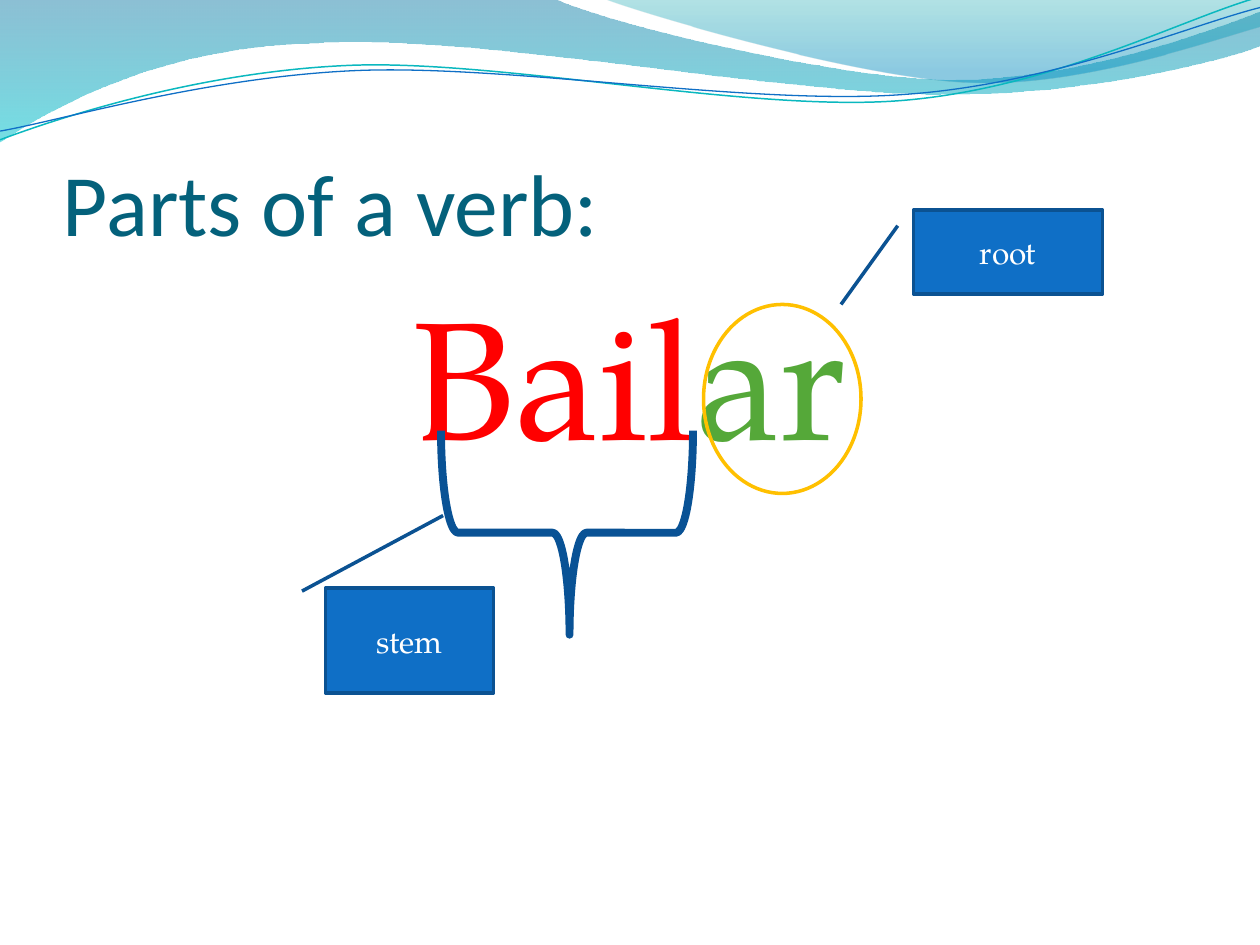
from dataclasses import dataclass

from lxml.etree import SubElement
from pptx import Presentation
from pptx.dml.color import RGBColor
from pptx.enum.shapes import MSO_SHAPE
from pptx.enum.text import MSO_ANCHOR, PP_ALIGN
from pptx.oxml.ns import qn
from pptx.util import Pt


@dataclass(frozen=True)
class Theme:
    heading_font: str = "Calibri"
    body_font: str = "TeX Gyre Pagella"
    title_size: int = 50
    verb_size: int = 96
    label_size: int = 18
    title: str = "04617B"
    stem: str = "FF0000"
    ending: str = "55A839"
    ring: str = "FFC000"
    label_fill: str = "0F6FC6"
    label_line: str = "0B5292"
    brace: str = "095295"
    label_text: str = "FFFFFF"
    teal_line: str = "0AB8BF"
    # Gradient stops: position, colour, opacity in percent
    back_wave: tuple = ((0, "0074A1", 45), (1, "00C6CF", 55))
    front_wave: tuple = ((0, "00A1A9", 30), (0.8, "008BBF", 45))


THEME = Theme()

# Wave outlines: one point is a straight segment, three are a Bezier curve
BACK_WAVE = [
    [(-0.5, -0.2)], [(316.8, -0.7)],
    [(342.7, 12.2), (478.1, 45.4), (545.8, 45.4)],
    [(614.2, 45.4), (689.8, 18.7), (720, 6.5)],
    [(720.7, 25.9)],
    [(707.8, 31.7), (626.4, 54.7), (537.1, 54)],
    [(446.4, 54), (275, 20.2), (185, 24.5)],
    [(92.9, 25.9), (33.1, 59.8), (-0.7, 81.4)],
]
FRONT_WAVE = [
    [(344.9, -0.7)],
    [(366.5, 7.9), (491, 44.6), (553.7, 46.8)],
    [(616.3, 49.7), (691.9, 23), (720, 15.1)],
    [(720, 0)],
]
TEAL_STROKE = [
    [(0, 79.9)],
    [(34.6, 67), (113.8, 41), (199.4, 37.4)],
    [(284.4, 33.8), (427, 64.1), (513.4, 57.6)],
    [(599.8, 51.1), (675.4, 10.8), (718.6, -1.4)],
]
BLUE_STROKE = [
    [(0, 74.9)],
    [(33.8, 69.1), (118.1, 43.9), (203.8, 40.3)],
    [(290.2, 36.7), (429.8, 60.5), (516.2, 54)],
    [(601.9, 48.2), (677.5, 15.1), (720, 4.3)],
]


def style_shape(shape, fill=None, line=None, width=0):
    shape.shadow.inherit = False
    if fill:
        shape.fill.solid()
        shape.fill.fore_color.rgb = RGBColor.from_string(fill)
    else:
        shape.fill.background()
    if line:
        shape.line.color.rgb = RGBColor.from_string(line)
        shape.line.width = Pt(width)
    else:
        shape.line.fill.background()


def add_outline(page, outline, close):
    """Build a freeform, then join each triple of segments into one curve."""
    points = [(Pt(x), Pt(y)) for segment in outline for x, y in segment]
    builder = page.shapes.build_freeform(*points[0], scale=1.0)
    builder.add_line_segments(points[1:], close=close)
    shape = builder.convert_to_shape()
    pieces = iter(list(shape._element.iter(qn("a:lnTo"))))
    for segment in outline[1:]:
        first, *others = [next(pieces) for _ in segment]
        if others:
            first.tag = qn("a:cubicBezTo")
        for piece in others:
            first.append(piece[0])
            piece.getparent().remove(piece)
    return shape


def add_wave(page, outline, stops):
    wave = add_outline(page, outline, close=True)
    style_shape(wave)
    wave.fill.gradient()
    wave.fill.gradient_angle = 270
    for stop, (position, colour, _) in zip(wave.fill.gradient_stops, stops):
        stop.position = position
        stop.color.rgb = RGBColor.from_string(colour)
    colours = wave._element.spPr.iter(qn("a:srgbClr"))
    for colour, (_, _, opacity) in zip(list(colours), stops):
        SubElement(colour, qn("a:alpha"), val=str(opacity * 1000))


def add_stroke(page, outline, colour, width):
    style_shape(add_outline(page, outline, close=False), line=colour, width=width)


def add_span(para, text, font, size, colour):
    span = para.add_run()
    span.text = text
    span.font.name = font
    span.font.size = Pt(size)
    span.font.color.rgb = RGBColor.from_string(colour)


def add_text(page, frame, anchor, margins):
    """Add a wrapping text box and return its first paragraph."""
    box = page.shapes.add_textbox(*map(Pt, frame)).text_frame
    box.word_wrap = True
    box.vertical_anchor = anchor
    box.margin_left, box.margin_top, box.margin_right, box.margin_bottom = map(Pt, margins)
    return box.paragraphs[0]


def add_shape(page, kind, frame, **style):
    shape = page.shapes.add_shape(kind, *map(Pt, frame))
    style_shape(shape, **style)
    return shape


def add_callout(page, text, frame, pointer=()):
    """Add a label; its pointer is y1, x1, y2, x2 as shares of its size."""
    callout = add_shape(page, MSO_SHAPE.LINE_CALLOUT_1, frame,
                        fill=THEME.label_fill, line=THEME.label_line, width=2)
    for index, value in enumerate(pointer):
        callout.adjustments[index] = value
    callout.text_frame.vertical_anchor = MSO_ANCHOR.MIDDLE
    para = callout.text_frame.paragraphs[0]
    para.alignment = PP_ALIGN.CENTER
    add_span(para, text, THEME.body_font, THEME.label_size, THEME.label_text)


def main():
    deck = Presentation()
    deck.slide_width, deck.slide_height = Pt(720), Pt(540)
    page = deck.slides.add_slide(deck.slide_layouts[6])

    # Waves along the top
    add_wave(page, BACK_WAVE, THEME.back_wave)
    add_wave(page, FRONT_WAVE, THEME.front_wave)
    add_stroke(page, TEAL_STROKE, THEME.teal_line, 0.85)
    add_stroke(page, BLUE_STROKE, THEME.label_fill, 0.75)

    # Title
    title = add_text(page, (36, 55, 648, 90), MSO_ANCHOR.BOTTOM, (0, 3.6, 0, 0))
    add_span(title, "Parts of a verb:", THEME.heading_font, THEME.title_size, THEME.title)

    # Verb, split into stem and ending
    verb = add_text(page, (36, 152.4, 648, 345.6), MSO_ANCHOR.TOP, (7.2, 3.6, 7.2, 3.6))
    verb.alignment = PP_ALIGN.CENTER
    verb_format = verb._p.get_or_add_pPr()
    verb_format.set("marL", str(Pt(21.6)))
    verb_format.set("indent", str(Pt(-21.6)))
    add_span(verb, "Bail", THEME.body_font, THEME.verb_size, THEME.stem)
    add_span(verb, "ar", THEME.body_font, THEME.verb_size, THEME.ending)

    # Marks and labels
    add_shape(page, MSO_SHAPE.OVAL, (402, 174, 90, 108), line=THEME.ring, width=2)
    add_callout(page, "root", (522, 120, 108, 48))
    brace = add_shape(page, MSO_SHAPE.RIGHT_BRACE, (265.7, 232.4, 116.6, 144),
                      line=THEME.brace, width=4.5)
    brace.rotation = 90
    brace.adjustments[1] = 0.49
    add_callout(page, "stem", (186, 336, 96, 60), (0.03, -0.14, -0.69, 0.7))

    deck.save("out.pptx")


if __name__ == "__main__":
    main()
